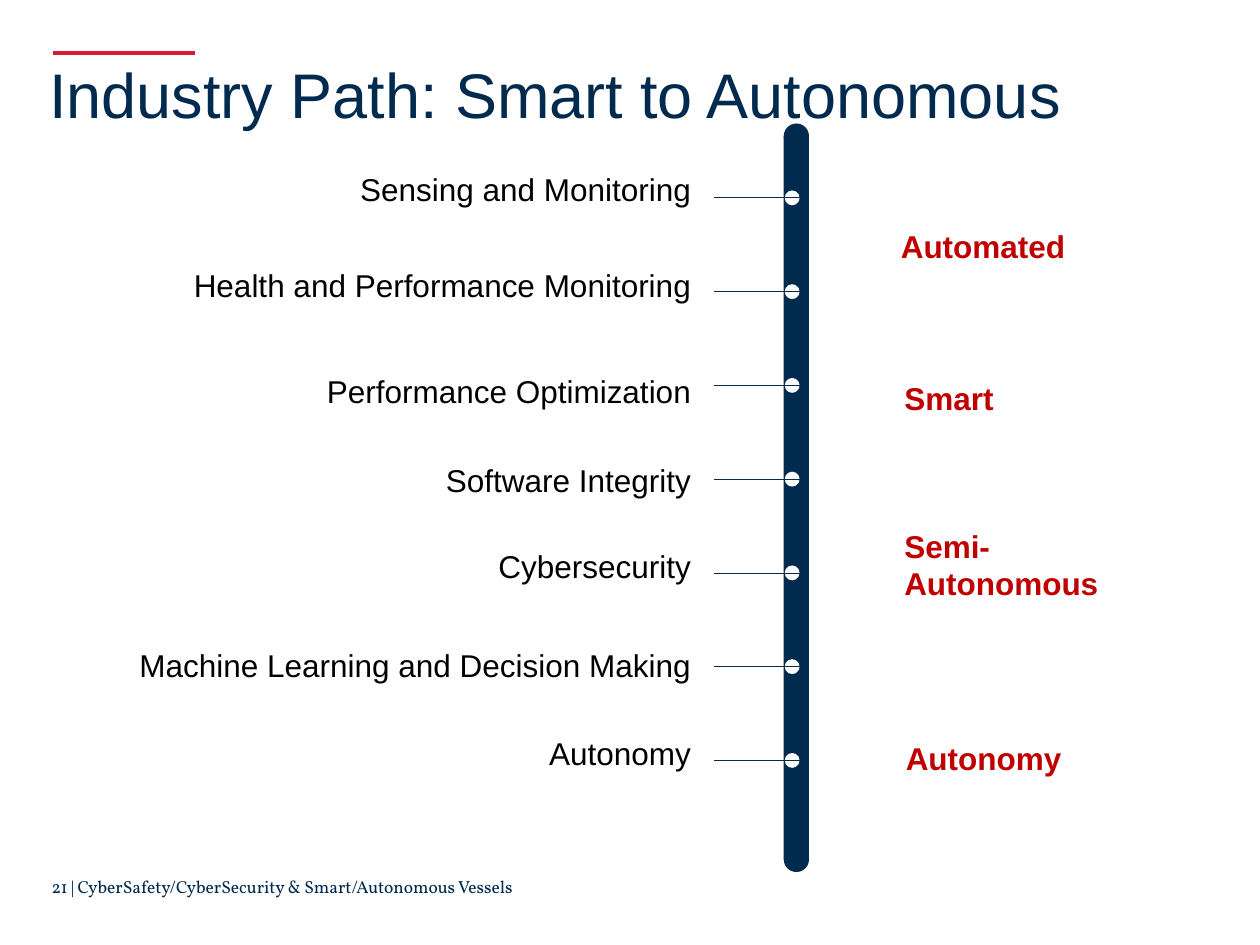
from pptx import Presentation
from pptx.dml.color import RGBColor
from pptx.enum.shapes import MSO_CONNECTOR as Conn, MSO_SHAPE as Shape
from pptx.enum.text import MSO_ANCHOR as Anchor, PP_ALIGN as Align
from pptx.oxml.ns import qn
from pptx.util import Cm, Pt
from lxml.etree import SubElement

NAVY, RED, CRIMSON = "002A4E", "DA1A32", "C00000"
BLACK, WHITE = "000000", "FFFFFF"
TOPICS = [
    ("Sensing and Monitoring", 3.3),
    ("Health and Performance Monitoring", 5.23),
    ("Performance Optimization", 7.37),
    ("Software Integrity", 9.17),
    ("Cybersecurity", 10.9),
    ("Machine Learning and Decision Making", 12.9),
    ("Autonomy", 14.68),
]
STAGES = [
    ("Automated", 17.91, 4.45),
    ("Smart", 17.98, 7.52),
    ("Semi-\nAutonomous", 17.98, 10.49),
    ("Autonomy", 18.01, 14.78),
]
DOT_SIZE, FIRST_DOT, DOT_PITCH = 0.3, 3.99, 1.89


def color(value):
    """Turn a hex string into a colour."""
    return RGBColor.from_string(value)


def style_text(tf, text, size, fill, font="Arial", bold=False, align=Align.LEFT):
    """Write the text and format each of its paragraphs."""
    tf.text = text
    tf.word_wrap = True
    for p in tf.paragraphs:
        p.alignment = align
        p.font.name = font
        p.font.size = Pt(size)
        p.font.bold = bold
        p.font.color.rgb = color(fill)


def add_title(s, text):
    """Place and format the slide title."""
    sp = s.shapes.title
    sp.left, sp.top, sp.width, sp.height = Cm(0.74), Cm(1.09), Cm(23.6), Cm(1.7)
    style_text(sp.text_frame, text, 36, NAVY)
    sp.text_frame.vertical_anchor = Anchor.BOTTOM
    sp.text_frame.paragraphs[0].line_spacing = 0.9


def add_text(s, text, x, y, w, h, size, fill, **options):
    """Add a text box."""
    box = s.shapes.add_textbox(Cm(x), Cm(y), Cm(w), Cm(h))
    style_text(box.text_frame, text, size, fill, **options)


def add_shape(shapes, kind, x, y, w, h, fill):
    """Add a flat shape without an outline."""
    sp = shapes.add_shape(kind, Cm(x), Cm(y), Cm(w), Cm(h))
    sp.shadow.inherit = False
    sp.fill.solid()
    sp.fill.fore_color.rgb = color(fill)
    sp.line.fill.background()


def add_line(s, x1, x2, y, fill, width):
    """Add a horizontal line without a shadow."""
    line = s.shapes.add_connector(Conn.STRAIGHT, Cm(x1), Cm(y), Cm(x2), Cm(y))
    line.line.color.rgb = color(fill)
    line.line.width = Pt(width)
    SubElement(line._element.spPr, qn("a:effectLst"))


def add_rail(s):
    """Add the vertical rail with its round ends."""
    shapes = s.shapes.add_group_shape().shapes
    for y in (2.49, 17.07):
        add_shape(shapes, Shape.OVAL, 15.8, y, 0.51, 0.51, NAVY)
    add_shape(shapes, Shape.RECTANGLE, 15.8, 2.74, 0.51, 14.58, NAVY)


def add_topic(s, i, text, top):
    """Add a stop on the rail with its leader line and label."""
    y = FIRST_DOT + i * DOT_PITCH
    add_shape(s.shapes, Shape.OVAL, 15.82, y - DOT_SIZE / 2, DOT_SIZE, DOT_SIZE, WHITE)
    add_line(s, 14.4, 16.13, y, NAVY, 0.5)
    add_text(s, text, 2.18, top, 12, 1.02, 18, BLACK, align=Align.RIGHT)


def main():
    """Build the slide and save it."""
    prs = Presentation()
    prs.slide_width, prs.slide_height = Cm(25.4), Cm(19.05)
    s = prs.slides.add_slide(prs.slide_layouts[5])
    add_line(s, 1.07, 3.94, 1.07, RED, 2.5)
    add_title(s, "Industry Path: Smart to Autonomous")
    add_rail(s)
    for i, (text, top) in enumerate(TOPICS):
        add_topic(s, i, text, top)
    for text, x, y in STAGES:
        add_text(s, text, x, y, 4.8, 1.02 + 0.78 * text.count("\n"), 18, CRIMSON, bold=True)
    add_text(s, "21 | CyberSafety/CyberSecurity & Smart/Autonomous Vessels",
             0.79, 17.53, 10.52, 0.66, 10, NAVY, font="Vollkorn")
    prs.save("out.pptx")


if __name__ == "__main__":
    main()
